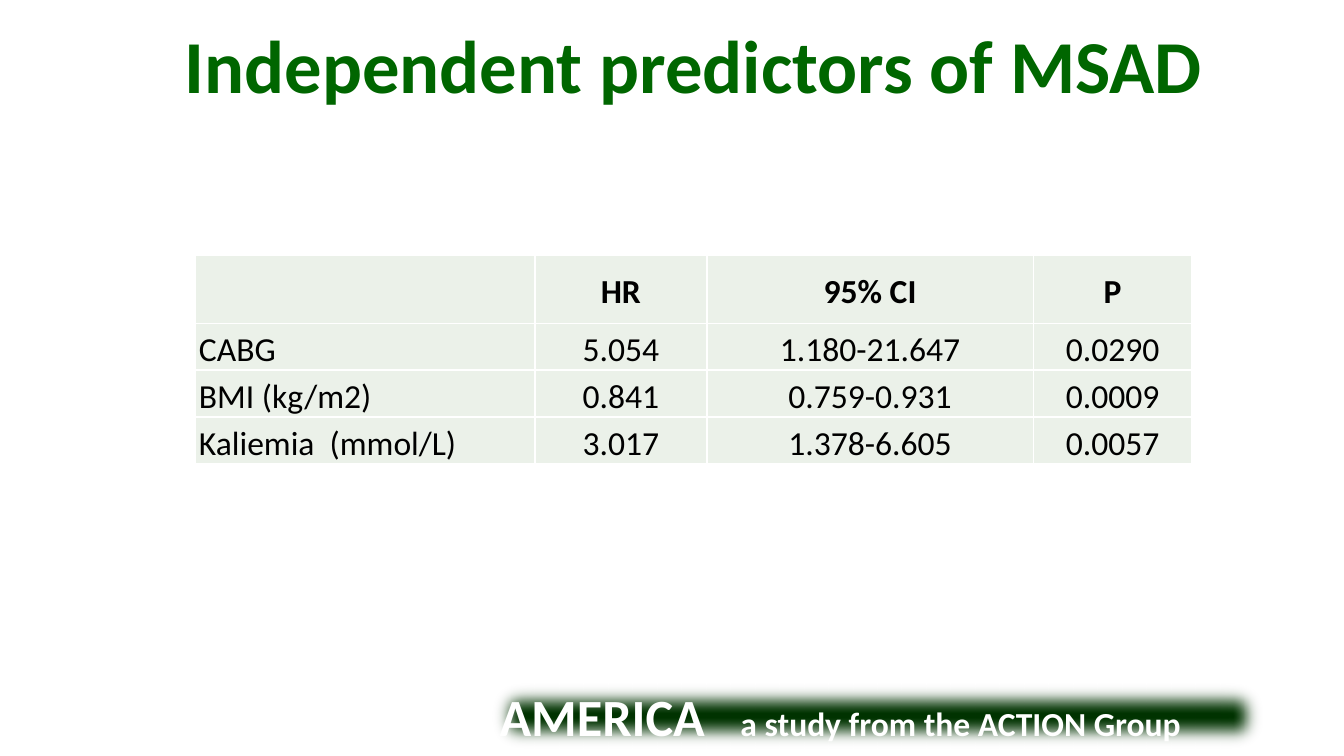
import pptx
import pptx.dml.color
import pptx.enum.shapes
import pptx.enum.text
import pptx.oxml
import pptx.oxml.ns
import pptx.util
import lxml.etree

Pt = pptx.util.Pt
RGBColor = pptx.dml.color.RGBColor
ALIGN = pptx.enum.text.PP_ALIGN
ANCHOR = pptx.enum.text.MSO_ANCHOR
qn = pptx.oxml.ns.qn

WHITE = RGBColor(0xFF, 0xFF, 0xFF)
BLACK = RGBColor(0x00, 0x00, 0x00)
TITLE_GREEN = RGBColor(0x00, 0x66, 0x00)
BAR_GREEN = RGBColor(0x00, 0x33, 0x00)
CELL_GREEN = RGBColor(0xEB, 0xF1, 0xE9)

PREDICTORS = [
    ["", "HR", "95% CI", "P"],
    ["CABG", "5.054", "1.180-21.647", "0.0290"],
    ["BMI (kg/m2)", "0.841", "0.759-0.931", "0.0009"],
    ["Kaliemia  (mmol/L)", "3.017", "1.378-6.605", "0.0057"],
]


def style_font(font, size, color, bold=True):
    """Set typeface, size, colour and weight."""
    font.name = "Calibri"
    font.size = Pt(size)
    font.color.rgb = color
    font.bold = bold


def add_footer(page, left, top, width, height):
    """Draw the soft-edged bar with the study name."""
    bar = page.shapes.add_shape(
        pptx.enum.shapes.MSO_SHAPE.RECTANGLE,
        Pt(left), Pt(top), Pt(width), Pt(height))
    bar.shadow.inherit = False
    bar.fill.solid()
    bar.fill.fore_color.rgb = BAR_GREEN
    bar.line.fill.background()
    effects = bar.element.spPr.find(qn("a:effectLst"))
    lxml.etree.SubElement(effects, qn("a:softEdge"), rad=str(Pt(10)))
    frame = bar.text_frame
    frame.word_wrap = True
    frame.vertical_anchor = ANCHOR.TOP
    para = frame.paragraphs[0]
    para.alignment = ALIGN.LEFT
    tabs = lxml.etree.SubElement(para._p.get_or_add_pPr(), qn("a:tabLst"))
    lxml.etree.SubElement(tabs, qn("a:tab"), pos=str(Pt(129)), algn="l")
    for words, size in (("AMERICA\t", 28), ("a study from the ACTION Group", 18)):
        span = para.add_run()
        span.text = words
        style_font(span.font, size, WHITE)


def add_title(page, left, top, width, height):
    """Place the centred slide title."""
    box = page.shapes.add_textbox(Pt(left), Pt(top), Pt(width), Pt(height))
    frame = box.text_frame
    frame.word_wrap = True
    frame.vertical_anchor = ANCHOR.MIDDLE
    frame.text = "Independent predictors of MSAD"
    para = frame.paragraphs[0]
    para.alignment = ALIGN.CENTER
    style_font(para.runs[0].font, 40, TITLE_GREEN)


def add_borders(cell):
    """Give a cell thin white borders on its four sides."""
    properties = cell._tc.get_or_add_tcPr()
    for index, side in enumerate(("lnL", "lnR", "lnT", "lnB")):
        line = pptx.oxml.parse_xml(
            f'<a:{side} {pptx.oxml.ns.nsdecls("a")} w="{Pt(1)}"><a:solidFill>'
            f'<a:srgbClr val="{WHITE}"/></a:solidFill></a:{side}>')
        properties.insert(index, line)


def fill_cell(cell, words, is_header, is_label):
    """Write and style one table cell."""
    cell.fill.solid()
    cell.fill.fore_color.rgb = CELL_GREEN
    add_borders(cell)
    cell.margin_left = cell.margin_right = Pt(2.2)
    cell.margin_top = cell.margin_bottom = 0
    cell.vertical_anchor = ANCHOR.MIDDLE if is_header else ANCHOR.TOP
    cell.text_frame.text = words
    para = cell.text_frame.paragraphs[0]
    para.alignment = ALIGN.LEFT if is_label else ALIGN.CENTER
    para.line_spacing = 1.15
    style_font(para.font, 18, BLACK, is_header)
    for span in para.runs:
        style_font(span.font, 18, BLACK, is_header)


def add_predictors(page, left, top, width, height):
    """Build the table of predictors."""
    shares = (2.53, 1.28, 2.43, 1.18)
    header_height = 36.5
    row_height = (height - header_height) / (len(PREDICTORS) - 1)
    table = page.shapes.add_table(
        len(PREDICTORS), len(shares),
        Pt(left), Pt(top), Pt(width), Pt(height)).table
    for column, share in zip(table.columns, shares):
        column.width = Pt(width * share / sum(shares))
    for row_index, values in enumerate(PREDICTORS):
        is_header = row_index == 0
        table.rows[row_index].height = Pt(header_height if is_header else row_height)
        for column_index, words in enumerate(values):
            fill_cell(table.cell(row_index, column_index), words,
                      is_header, column_index == 0)


def main():
    """Build and save the slide."""
    deck = pptx.Presentation()
    deck.slide_width, deck.slide_height = Pt(720), Pt(405)
    page = deck.slides.add_slide(deck.slide_layouts[6])
    add_footer(page, 260.6, 363, 419, 41)
    add_title(page, 47.5, 0, 648, 67.7)
    add_predictors(page, 104.4, 136.8, 534.2, 111.8)
    deck.save("out.pptx")


if __name__ == "__main__":
    main()
